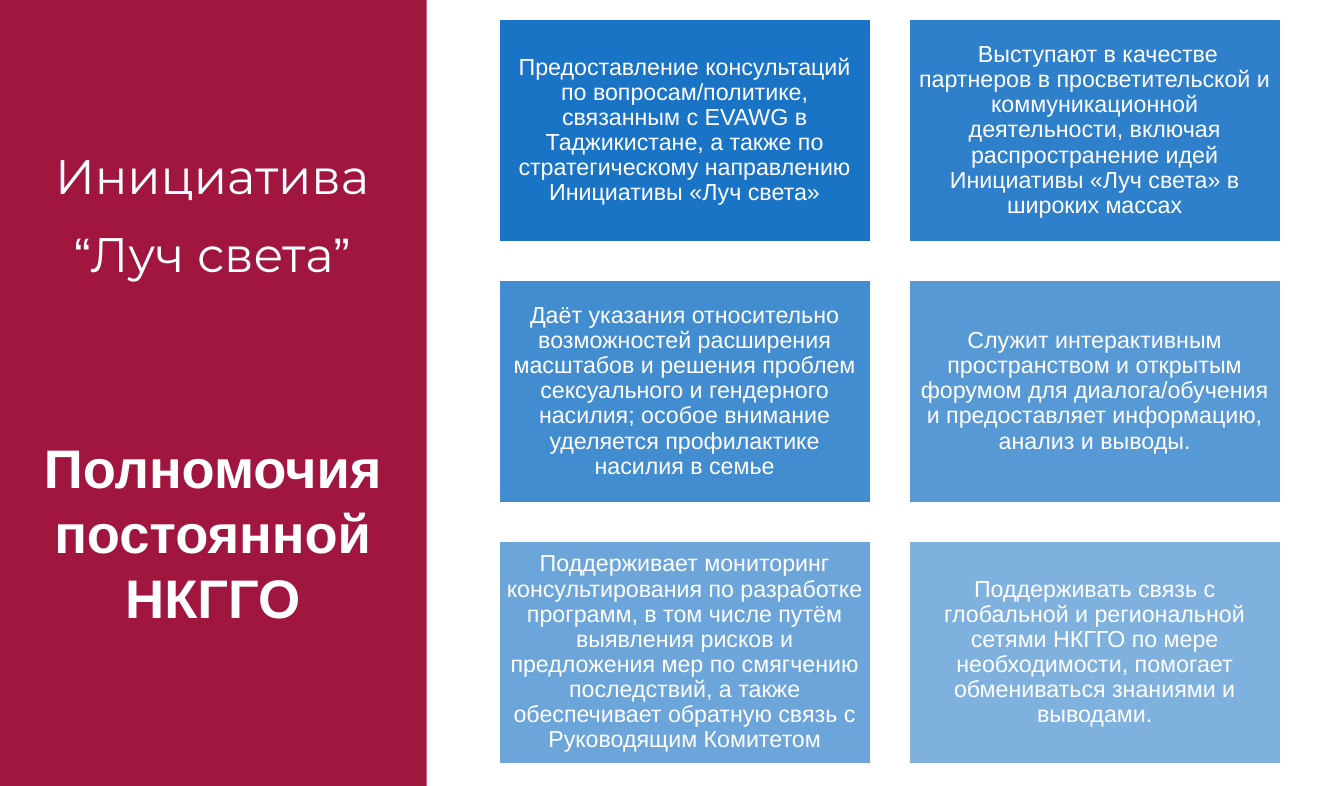
from dataclasses import dataclass
from pptx import Presentation
from pptx.dml.color import RGBColor as RGB
from pptx.enum.shapes import MSO_SHAPE as Shape
from pptx.enum.text import MSO_ANCHOR as Anchor, MSO_AUTO_SIZE as Fit, PP_ALIGN as Align
from pptx.oxml.ns import qn
from pptx.util import Inches, Pt
from lxml.etree import SubElement


@dataclass(frozen=True)
class Theme:
    red: RGB = RGB(0xA0, 0x16, 0x3F)
    blue: RGB = RGB(0x00, 0x65, 0xC0)
    white: RGB = RGB(0xFF, 0xFF, 0xFF)
    sans: str = "Arial"
    light: str = "Montserrat"
    head: float = 28
    title: float = 25
    body: float = 12


THEME = Theme()
WIDE, HIGH = 9.637, 5.634
CARDS = [
    "Предоставление консультаций по вопросам/политике, связанным с EVAWG в Таджикистане, а также по стратегическому направлению Инициативы «Луч света»",
    " Выступают в качестве партнеров в просветительской и коммуникационной деятельности, включая распространение идей Инициативы «Луч света» в широких массах",
    "Даёт указания относительно возможностей расширения масштабов и решения проблем сексуального и гендерного насилия; особое внимание уделяется профилактике насилия в семье",
    "Служит интерактивным пространством и открытым форумом для диалога/обучения и предоставляет информацию, анализ и выводы.",
    "Поддерживает мониторинг консультирования по разработке программ, в том числе путём выявления рисков и предложения мер по смягчению последствий, а также обеспечивает обратную связь с Руководящим Комитетом",
    "Поддерживать связь с глобальной и региональной сетями НКГГО по мере необходимости, помогает обмениваться знаниями и выводами.",
]


def style(item, form):
    for name, value in form.items():
        setattr(item, name, value)


def write(frame, lines, size, bold=False, **form):
    style(frame, {"word_wrap": True, "margin_top": Inches(0.05), "margin_bottom": Inches(0.05)})
    for i, runs in enumerate(lines):
        para = frame.paragraphs[0] if i == 0 else frame.add_paragraph()
        style(para, {"alignment": Align.CENTER, **form})
        if i == 0:
            para.space_before = Pt(0)
        for text, face in runs:
            run = para.add_run()
            run.text = text
            style(run.font, {"name": face, "size": Pt(size), "bold": bold})
            run.font.color.rgb = THEME.white


def block(slide, box, color):
    rect = slide.shapes.add_shape(Shape.RECTANGLE, *map(Inches, box))
    rect.shadow.inherit = False
    rect.fill.solid()
    rect.fill.fore_color.rgb = color
    return rect


def label(slide, box, lines, size, **form):
    frame = slide.shapes.add_textbox(*map(Inches, box)).text_frame
    frame.auto_size = Fit.SHAPE_TO_FIT_TEXT
    write(frame, lines, size, **form)


def panel(slide, box):
    left, top, wide, high = box
    block(slide, box, THEME.red).line.fill.background()
    sans, light = THEME.sans, THEME.light
    label(slide, (left + 0.14, top + 3.06, wide - 0.28, 1.95),
          [[("Полномочия постоянной", sans)], [("НКГГО", sans)]],
          THEME.head, bold=True)
    label(slide, (left + 0.24, top + 0.97, wide - 0.49, 1.11),
          [[("Инициатива", light)],
           [("“", sans), ("Луч света", light), ("”", sans)]],
          THEME.title, line_spacing=1.07, space_before=Pt(8))


def card(slide, box, text, alpha):
    rect = block(slide, box, THEME.blue)
    color = rect.fill._xPr.find(qn("a:solidFill"))[0]
    SubElement(color, qn("a:alpha")).set("val", str(alpha * 1000))
    rect.line.color.rgb = THEME.white
    rect.line.width = Pt(2)
    frame = rect.text_frame
    style(frame, {"vertical_anchor": Anchor.MIDDLE,
                  "margin_left": Inches(0.05), "margin_right": Inches(0.05)})
    write(frame, [[(text, THEME.sans)]], THEME.body, line_spacing=0.9)


def grid(slide, box, cols=2, rows=3, gap=0.26):
    left, top, wide, high = box
    w = (wide - gap * (cols - 1)) / cols
    h = (high - gap * (rows - 1)) / rows
    for i, text in enumerate(CARDS):
        row, col = divmod(i, cols)
        spot = (left + col * (w + gap), top + row * (h + gap), w, h)
        card(slide, spot, text, 90 - 8 * i)


def main():
    deck = Presentation()
    deck.slide_width = Inches(WIDE)
    deck.slide_height = Inches(HIGH)
    slide = deck.slides.add_slide(deck.slide_layouts[6])
    panel(slide, (-0.01, 0, 3.07, HIGH))
    grid(slide, (3.57, 0.13, 5.62, 5.35))
    deck.save("out.pptx")


if __name__ == "__main__":
    main()
